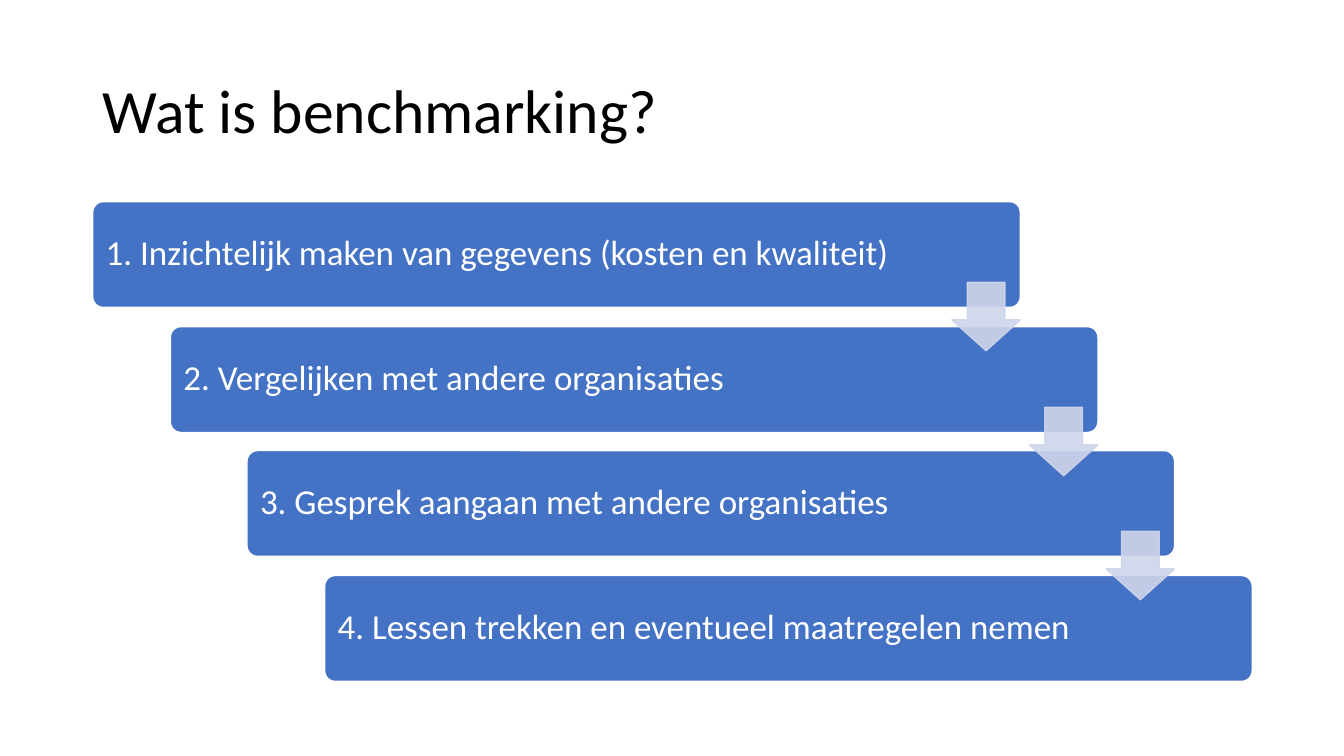
from dataclasses import dataclass

import lxml.etree
import pptx
import pptx.dml.color
import pptx.enum.shapes
import pptx.enum.text
import pptx.oxml.ns
import pptx.presentation
import pptx.shapes.autoshape
import pptx.slide
import pptx.text.text
import pptx.util

EMU_PER_PX = 9144  # 100 px to the inch
BLANK_LAYOUT = 6
FONT_NAME = "Calibri"

BLACK = pptx.dml.color.RGBColor(0x00, 0x00, 0x00)
WHITE = pptx.dml.color.RGBColor(0xFF, 0xFF, 0xFF)
BLUE = pptx.dml.color.RGBColor(0x44, 0x72, 0xC4)
PALE_BLUE = pptx.dml.color.RGBColor(0xCF, 0xD5, 0xEA)
ARROW_OPACITY = 90

TITLE = "Wat is benchmarking?"
STEPS = (
    "1. Inzichtelijk maken van gegevens (kosten en kwaliteit)",
    "2. Vergelijken met andere organisaties",
    "3. Gesprek aangaan met andere organisaties",
    "4. Lessen trekken en eventueel maatregelen nemen",
)


@dataclass(frozen=True)
class Box:
    left: int
    top: int
    width: int
    height: int

    def emu(self) -> tuple[int, int, int, int]:
        return px(self.left), px(self.top), px(self.width), px(self.height)


TITLE_BOX = Box(92, 40, 1150, 145)
FIRST_STEP = Box(92, 200, 920, 105)
LAST_STEP = Box(322, 571, 920, 105)
ARROW_SIZE = 68
ARROW_DROP = 80


def px(length: int) -> int:
    return pptx.util.Emu(length * EMU_PER_PX)


def step_box(index: int) -> Box:
    """Place a step evenly between the first and the last one."""
    share = index / (len(STEPS) - 1)
    return Box(
        FIRST_STEP.left + round((LAST_STEP.left - FIRST_STEP.left) * share),
        FIRST_STEP.top + round((LAST_STEP.top - FIRST_STEP.top) * share),
        FIRST_STEP.width,
        FIRST_STEP.height,
    )


def arrow_box(step: Box) -> Box:
    """Align the arrow with the right side of the step it leaves."""
    left = step.left + step.width - ARROW_SIZE
    return Box(left, step.top + ARROW_DROP, ARROW_SIZE, ARROW_SIZE)


def write_text(
    frame: pptx.text.text.TextFrame,
    text: str,
    size: int,
    color: pptx.dml.color.RGBColor,
) -> None:
    frame.word_wrap = True
    frame.vertical_anchor = pptx.enum.text.MSO_ANCHOR.MIDDLE
    paragraph = frame.paragraphs[0]
    paragraph.text = text
    paragraph.alignment = pptx.enum.text.PP_ALIGN.LEFT
    paragraph.line_spacing = 0.9
    paragraph.font.name = FONT_NAME
    paragraph.font.size = pptx.util.Pt(size)
    paragraph.font.color.rgb = color


def add_plain_shape(
    slide: pptx.slide.Slide,
    kind: pptx.enum.shapes.MSO_SHAPE,
    box: Box,
    adjustments: tuple[float, ...],
    fill: pptx.dml.color.RGBColor,
    line: pptx.dml.color.RGBColor,
) -> pptx.shapes.autoshape.Shape:
    shape = slide.shapes.add_shape(kind, *box.emu())
    shape.shadow.inherit = False
    for index, value in enumerate(adjustments):
        shape.adjustments[index] = value
    shape.fill.solid()
    shape.fill.fore_color.rgb = fill
    shape.line.color.rgb = line
    shape.line.width = pptx.util.Pt(1)
    return shape


def set_opacity(shape: pptx.shapes.autoshape.Shape, percent: int) -> None:
    """Make both the fill and the line partly transparent."""
    properties = shape.element.spPr
    for color in properties.iter(pptx.oxml.ns.qn("a:srgbClr")):
        alpha = lxml.etree.SubElement(color, pptx.oxml.ns.qn("a:alpha"))
        alpha.set("val", str(percent * 1000))


def add_title(slide: pptx.slide.Slide) -> None:
    title = slide.shapes.add_textbox(*TITLE_BOX.emu())
    write_text(title.text_frame, TITLE, 44, BLACK)


def add_step(slide: pptx.slide.Slide, box: Box, text: str) -> None:
    kind = pptx.enum.shapes.MSO_SHAPE.ROUNDED_RECTANGLE
    step = add_plain_shape(slide, kind, box, (0.1,), BLUE, WHITE)
    frame = step.text_frame
    frame.margin_left = frame.margin_right = px(10)
    frame.margin_top = frame.margin_bottom = px(10)
    write_text(frame, text, 25, WHITE)


def add_arrow(slide: pptx.slide.Slide, box: Box) -> None:
    kind = pptx.enum.shapes.MSO_SHAPE.DOWN_ARROW
    # The first adjustment is the shaft width, the second the head length.
    arrow = add_plain_shape(slide, kind, box, (0.55, 0.45), PALE_BLUE, PALE_BLUE)
    set_opacity(arrow, ARROW_OPACITY)


def build() -> pptx.presentation.Presentation:
    presentation = pptx.Presentation()
    presentation.slide_width = px(1333)
    presentation.slide_height = px(750)
    slide = presentation.slides.add_slide(presentation.slide_layouts[BLANK_LAYOUT])
    add_title(slide)
    boxes = [step_box(index) for index in range(len(STEPS))]
    for box, text in zip(boxes, STEPS):
        add_step(slide, box, text)
    for box in boxes[:-1]:
        add_arrow(slide, arrow_box(box))
    return presentation


if __name__ == "__main__":
    build().save("out.pptx")
